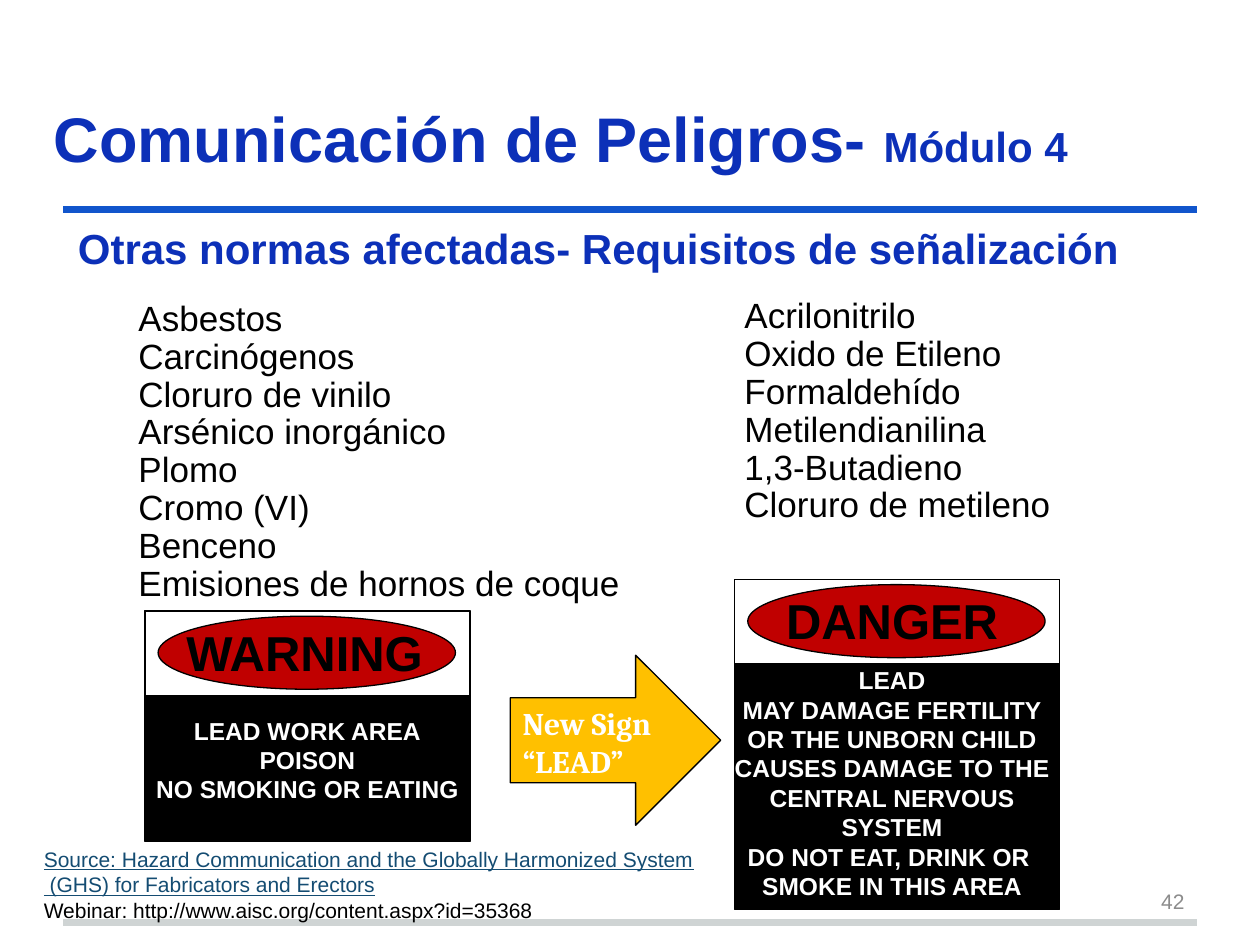
from collections import namedtuple
from lxml.etree import SubElement
from pptx import Presentation
from pptx.dml.color import RGBColor
from pptx.enum.shapes import MSO_CONNECTOR as Connector, MSO_SHAPE as Shape
from pptx.enum.text import MSO_ANCHOR as Anchor, PP_ALIGN as Align
from pptx.oxml.ns import qn
from pptx.util import Inches, Pt

COLORS = {
    "blue": "0C30B8", "rule": "1155CC", "gray_rule": "CFD4D4", "number": "8C8C8C",
    "black": "000000", "white": "FFFFFF", "red": "C00000", "amber": "FFC000",
    "link": "144C72",
}
COLUMNS, ROWS = 100, 75
WIDTH, HEIGHT = Inches(10), Inches(7.5)
MESSAGE_OVERHANG = 1.5
Box = namedtuple("Box", "left top width height")

LEFT_SUBSTANCES = [
    "Asbestos", "Carcinógenos", "Cloruro de vinilo", "Arsénico inorgánico",
    "Plomo", "Cromo (VI)", "Benceno", "Emisiones de hornos de coque",
]
RIGHT_SUBSTANCES = [
    "Acrilonitrilo", "Oxido de Etileno", "Formaldehído",
    "Metilendianilina", "1,3-Butadieno", "Cloruro de metileno",
]
WARNING_LINES = ["LEAD WORK AREA", "POISON", "NO SMOKING OR EATING"]
DANGER_LINES = [
    "LEAD", "MAY DAMAGE FERTILITY", "OR THE UNBORN CHILD", "CAUSES DAMAGE TO THE",
    "CENTRAL NERVOUS", "SYSTEM", "DO NOT EAT, DRINK OR ", "SMOKE IN THIS AREA",
]


def color(name):
    return RGBColor.from_string(COLORS[name])


def x(columns):
    return int(WIDTH * columns / COLUMNS)


def y(rows):
    return int(HEIGHT * rows / ROWS)


def place(box):
    return x(box.left), y(box.top), x(box.width), y(box.height)


def format_run(run, size, ink, bold=False, font="Arial"):
    run.font.name = font
    run.font.size = Pt(size)
    run.font.bold = bold
    run.font.color.rgb = color(ink)


def write_lines(shape, lines, size, ink, bold=False, font="Arial",
                align=Align.LEFT, spacing=None):
    frame = shape.text_frame
    frame.text = "\n".join(lines)
    for paragraph in frame.paragraphs:
        paragraph.alignment = align
        if spacing:
            paragraph.line_spacing = spacing
        for run in paragraph.runs:
            format_run(run, size, ink, bold, font)


def add_text(parent, box, lines, size, ink, inset=None, anchor=Anchor.TOP, **style):
    text_box = parent.add_textbox(*place(box))
    frame = text_box.text_frame
    frame.word_wrap = True
    frame.vertical_anchor = anchor
    if inset:
        frame.margin_left = frame.margin_right = x(inset)
        frame.margin_top = frame.margin_bottom = y(inset)
    write_lines(text_box, lines, size, ink, **style)
    return text_box


def add_panel(parent, kind, box, fill):
    panel = parent.add_shape(kind, *place(box))
    panel.shadow.inherit = False
    panel.fill.solid()
    panel.fill.fore_color.rgb = color(fill)
    panel.line.color.rgb = color("black")
    panel.line.width = Pt(0.75)
    return panel


def add_rule(shapes, row, ink):
    rule = shapes.add_connector(Connector.STRAIGHT, x(5), y(row), x(95), y(row))
    rule.line.color.rgb = color(ink)
    rule.line.width = Pt(4)
    SubElement(rule._element.spPr, qn("a:effectLst"))


def add_heading(shapes, box):
    title = add_text(shapes, box, ["Comunicación de Peligros- "], 36, "blue",
                     inset=1, anchor=Anchor.BOTTOM, bold=True)
    module = title.text_frame.paragraphs[0].add_run()
    module.text = "Módulo 4"
    format_run(module, 24, "blue", bold=True)
    subtitle = Box(box.left + 1.9, box.top + 14.3, box.width, 6)
    add_text(shapes, subtitle, ["Otras normas afectadas- Requisitos de señalización"],
             24, "blue", inset=1, bold=True)


def add_substances(shapes, box, names):
    add_text(shapes, box, names, 20, "black", inset=1, spacing=0.9)


def add_sign(shapes, box, word, word_indent, lines, message_drop, message_shift):
    sign = shapes.add_group_shape().shapes
    header = box._replace(height=6.7)
    oval = Box(box.left + 1.05, box.top + 0.4, 23.6, 5.8)
    label = Box(box.left + word_indent, oval.top, box.width - word_indent, 5.7)
    message = Box(box.left + message_shift - MESSAGE_OVERHANG, box.top + message_drop,
                  box.width + 2 * MESSAGE_OVERHANG, box.height - message_drop)
    add_panel(sign, Shape.RECTANGLE, box, "black")
    add_panel(sign, Shape.RECTANGLE, header, "white")
    add_panel(sign, Shape.OVAL, oval, "red")
    add_text(sign, label, [word], 28, "black", bold=True)
    add_text(sign, message, lines, 14, "white", bold=True, align=Align.CENTER)


def add_new_sign_arrow(shapes, box):
    arrow = add_panel(shapes, Shape.RIGHT_ARROW, box, "amber")
    arrow.text_frame.word_wrap = True
    arrow.text_frame.vertical_anchor = Anchor.TOP
    write_lines(arrow, ["New Sign", "“LEAD”"], 18, "white", bold=True, font="Cambria")


def add_footer(shapes, source_box, number_box):
    source = add_text(shapes, source_box, [
        "Source: Hazard Communication and the Globally Harmonized System",
        " (GHS) for Fabricators and Erectors",
        "Webinar: http://www.aisc.org/content.aspx?id=35368",
    ], 12, "black")
    for paragraph in source.text_frame.paragraphs[:2]:
        for run in paragraph.runs:
            run.font.underline = True
            run.font.color.rgb = color("link")
    add_text(shapes, number_box, ["42"], 12, "number", anchor=Anchor.MIDDLE,
             align=Align.RIGHT)


def main():
    presentation = Presentation()
    presentation.slide_width, presentation.slide_height = WIDTH, HEIGHT
    slide = presentation.slides.add_slide(presentation.slide_layouts[6])
    shapes = slide.shapes
    add_rule(shapes, 73.2, "gray_rule")
    add_rule(shapes, 16.65, "rule")
    add_heading(shapes, Box(3.3, 2.4, 90, 12.5))
    add_substances(shapes, Box(10, 22.9, 42.5, 25.2), LEFT_SUBSTANCES)
    add_substances(shapes, Box(58.1, 22.7, 34.7, 27.8), RIGHT_SUBSTANCES)
    add_sign(shapes, Box(58.3, 46, 25.8, 26.2), "DANGER", 3.1, DANGER_LINES, 6.3, -0.4)
    add_sign(shapes, Box(11.5, 48.5, 25.8, 18.3), "WARNING", 2.3, WARNING_LINES, 7.8, 0)
    add_new_sign_arrow(shapes, Box(40.5, 52, 16.7, 13.5))
    add_footer(shapes, Box(2.5, 66.7, 90, 7.1), Box(71.7, 69.5, 23.3, 4))
    presentation.save("out.pptx")


if __name__ == "__main__":
    main()
